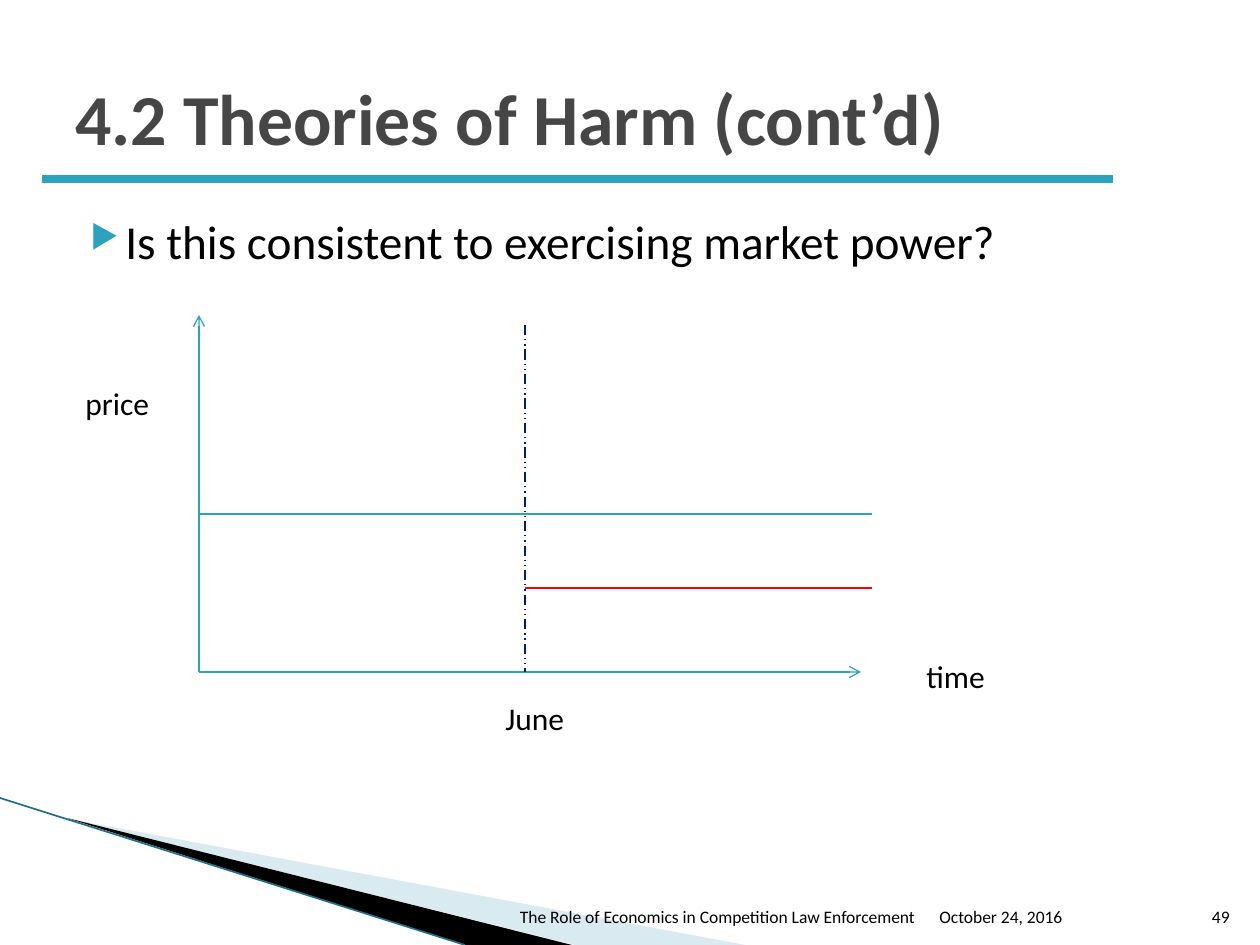
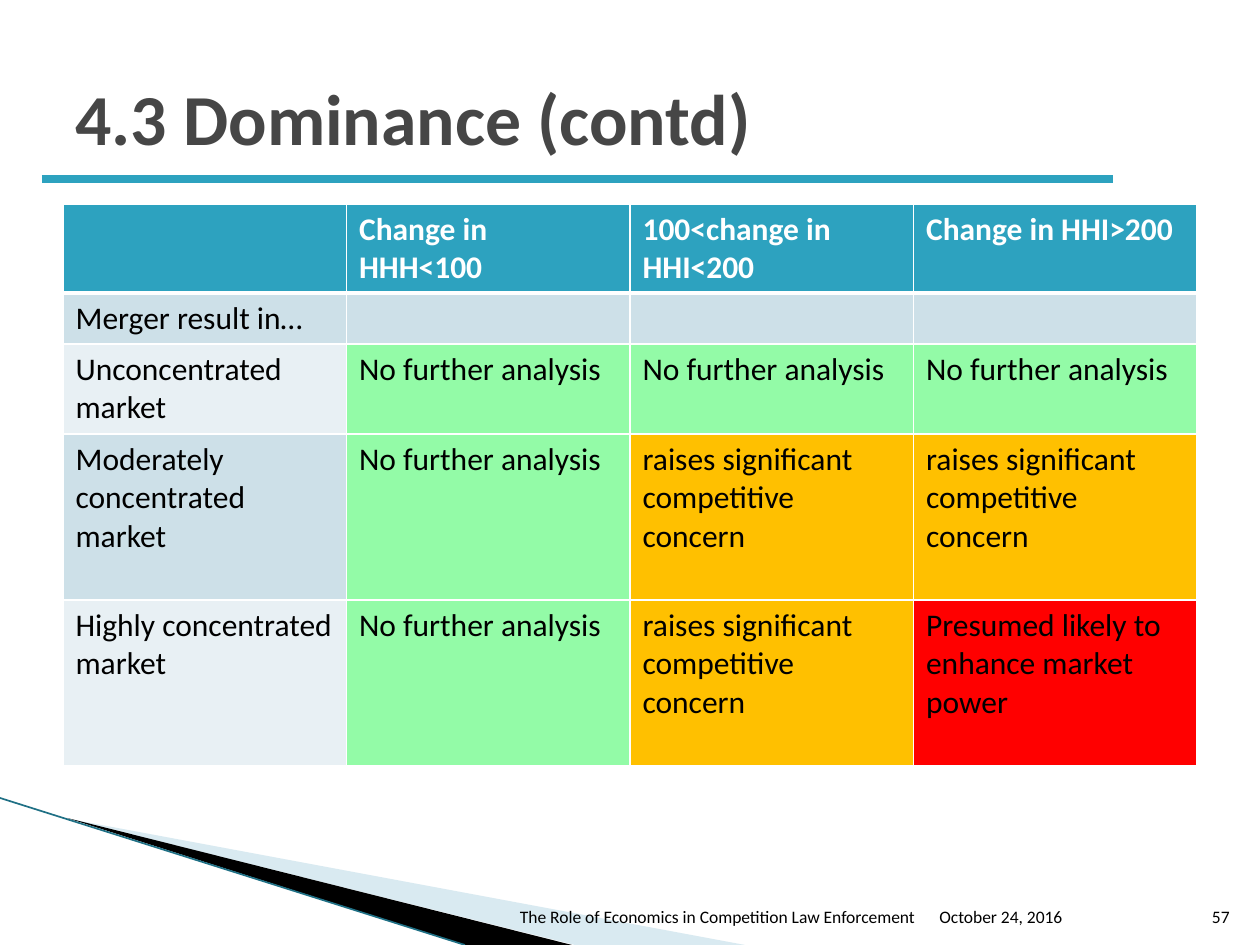
from dataclasses import dataclass

from lxml import etree
from pptx import Presentation
from pptx.dml.color import RGBColor
from pptx.enum.dml import MSO_LINE
from pptx.enum.shapes import MSO_CONNECTOR
from pptx.enum.text import MSO_ANCHOR, PP_ALIGN
from pptx.oxml.ns import qn
from pptx.util import Pt

PX = 914400 / 126
WIDE, HIGH = 1260, 945
STRAIGHT = MSO_CONNECTOR.STRAIGHT
DASH = MSO_LINE.DASH_DOT_DOT
LEFT, RIGHT = PP_ALIGN.LEFT, PP_ALIGN.RIGHT
TOP, MIDDLE, BOTTOM = MSO_ANCHOR.TOP, MSO_ANCHOR.MIDDLE, MSO_ANCHOR.BOTTOM


@dataclass(frozen=True)
class Theme:
    font: str = "Calibri"
    ink: str = "000000"
    white: str = "FFFFFF"
    head: str = "464646"
    teal: str = "2DA2BF"
    edge: str = "1F7085"
    pale: str = "A0CBDC"
    navy: str = "002060"
    red: str = "FF0000"
    green: str = "93FBA7"
    amber: str = "FFC000"
    bands: tuple = ("E8F0F4", "CDE0E8")
    title: int = 41
    body: int = 27
    label: int = 18
    foot: int = 10


THEME = Theme()


def emu(px):
    return round(px * PX)


def rgb(code):
    return RGBColor.from_string(code)


def add(parent, tag, **attrs):
    node = etree.SubElement(parent, qn(tag))
    for key, value in attrs.items():
        node.set(key, str(value))
    return node


def style(para, size, color, bold=False):
    font = para.font
    font.name, font.size, font.bold = THEME.font, Pt(size), bold
    font.color.rgb = rgb(color)


def put_text(slide, text, box, size=THEME.label, color=THEME.ink, bold=False,
             align=LEFT, anchor=TOP, bullet=False):
    frame = slide.shapes.add_textbox(*map(emu, box)).text_frame
    frame.word_wrap = True
    frame.vertical_anchor = anchor
    para = frame.paragraphs[0]
    para.text = text
    para.alignment = align
    if bullet:
        props = para._p.get_or_add_pPr()
        props.set("marL", str(emu(50)))
        props.set("indent", str(emu(-35)))
        add(add(props, "a:buClr"), "a:srgbClr", val=THEME.teal)
        add(props, "a:buSzPct", val=68000)
        add(props, "a:buChar", char="▶")
    style(para, size, color, bold)


def put_line(slide, start, end, color=THEME.teal, width=0.75, dash=None, arrow=False):
    rule = slide.shapes.add_connector(STRAIGHT, *map(emu, (*start, *end)))
    rule.line.color.rgb = rgb(color)
    rule.line.width = Pt(width)
    if dash:
        rule.line.dash_style = dash
    props = rule._element.spPr
    if arrow:
        add(props.find(qn("a:ln")), "a:tailEnd", type="arrow")
    add(props, "a:effectLst")


def put_wedge(slide, points, color, alpha=None):
    pen = slide.shapes.build_freeform(*points[0], scale=PX)
    pen.add_line_segments(points[1:], close=True)
    wedge = pen.convert_to_shape()
    wedge.shadow.inherit = False
    wedge.line.fill.background()
    wedge.fill.solid()
    wedge.fill.fore_color.rgb = rgb(color)
    if alpha:
        tint = wedge._element.spPr.find(".//" + qn("a:srgbClr"))
        add(tint, "a:alpha", val=alpha * 1000)


def draw_base(deck, title, number):
    slide = deck.slides.add_slide(deck.slide_layouts[6])
    # Corner wedges
    put_wedge(slide, [(69, 819), (745, HIGH), (575, HIGH)], THEME.pale, alpha=40)
    put_wedge(slide, [(67, 818), (572, HIGH), (465, HIGH)], THEME.ink)
    put_line(slide, (0, 798), (465, HIGH), color=THEME.edge, width=0.95)
    # Title and its rule
    put_text(slide, title, (63, 38, 1134, 157), size=THEME.title,
             color=THEME.head, bold=True, anchor=MIDDLE)
    put_line(slide, (42, 179), (1113, 179), width=5)
    # Footer
    footer = [
        ("The Role of Economics in Competition Law Enforcement", 483, 444, RIGHT),
        ("October 24, 2016", 927, 265, LEFT),
        (str(number), 1192, 50, RIGHT),
    ]
    for text, left, width, align in footer:
        put_text(slide, text, (left, 883, width, 50), size=THEME.foot,
                 align=align, anchor=BOTTOM)
    return slide


def draw_graph(slide, box):
    left, top, width, height = box
    right, base = left + width, top + height
    june, end = left + 326, right + 11
    high, low = top + 199, top + 273
    # Axes
    put_line(slide, (left, base), (left, top), arrow=True)
    put_line(slide, (left, base), (right, base), arrow=True)
    # Price before and after June
    put_line(slide, (left, high), (june, high))
    put_line(slide, (june, high), (end, high))
    put_line(slide, (june, top + 10), (june, base), color=THEME.navy, dash=DASH)
    put_line(slide, (june, low), (end, low), color=THEME.red)
    # Labels
    put_text(slide, "price", (left - 126, top + 63, 105, 51))
    put_text(slide, "time", (right + 53, base - 21, 179, 53))
    put_text(slide, "June", (june - 32, base + 21, 116, 51))


def fill_cell(cell, text, fill, color, bold, top, bottom):
    cell.text = text
    style(cell.text_frame.paragraphs[0], THEME.label, color, bold)
    props = cell._tc.get_or_add_tcPr()
    for side, width in zip("LRTB", (1, 1, top, bottom)):
        edge = add(props, f"a:ln{side}", w=Pt(width))
        add(add(edge, "a:solidFill"), "a:srgbClr", val=THEME.white)
    cell.fill.solid()
    cell.fill.fore_color.rgb = rgb(fill)


def draw_table(slide, box, rows, heights):
    count = len(rows[0])
    grid = slide.shapes.add_table(len(rows), count, *map(emu, box)).table
    for col in grid.columns:
        col.width = emu(box[2] / count)
    for r, (row, height) in enumerate(zip(rows, heights)):
        grid.rows[r].height = emu(height)
        head = r == 0
        for c, (text, fill) in enumerate(row):
            fill_cell(grid.cell(r, c), text,
                      fill or (THEME.teal if head else THEME.bands[r % 2]),
                      color=THEME.white if head else THEME.ink, bold=head,
                      top=3 if r == 1 else 1, bottom=3 if head else 1)


def harm_slide(deck):
    slide = draw_base(deck, "4.2 Theories of Harm (cont’d)", 49)
    put_text(slide, "Is this consistent to exercising market power?",
             (63, 206, 1134, 622), size=THEME.body, bullet=True)
    draw_graph(slide, (199, 315, 662, 357))


def merger_slide(deck):
    slide = draw_base(deck, "4.3 Dominance (contd)", 57)
    safe = ("No further analysis", THEME.green)
    risk = ("raises significant competitive concern", THEME.amber)
    harm = ("Presumed likely to enhance market power", THEME.red)
    blank = ("", None)
    rows = [
        [blank, ("Change in HHH<100", None), ("100<change in HHI<200", None),
         ("Change in HHI>200", None)],
        [("Merger result in…", None), blank, blank, blank],
        [("Unconcentrated market", None), safe, safe, safe],
        [("Moderately concentrated market", None), safe, risk, risk],
        [("Highly concentrated market", None), safe, risk, harm],
    ]
    heights = [89, 51, 90, 166, 166]
    draw_table(slide, (63, 204, 1134, sum(heights)), rows, heights)


def main():
    deck = Presentation()
    deck.slide_width, deck.slide_height = emu(WIDE), emu(HIGH)
    harm_slide(deck)
    merger_slide(deck)
    deck.save("out.pptx")


if __name__ == "__main__":
    main()
